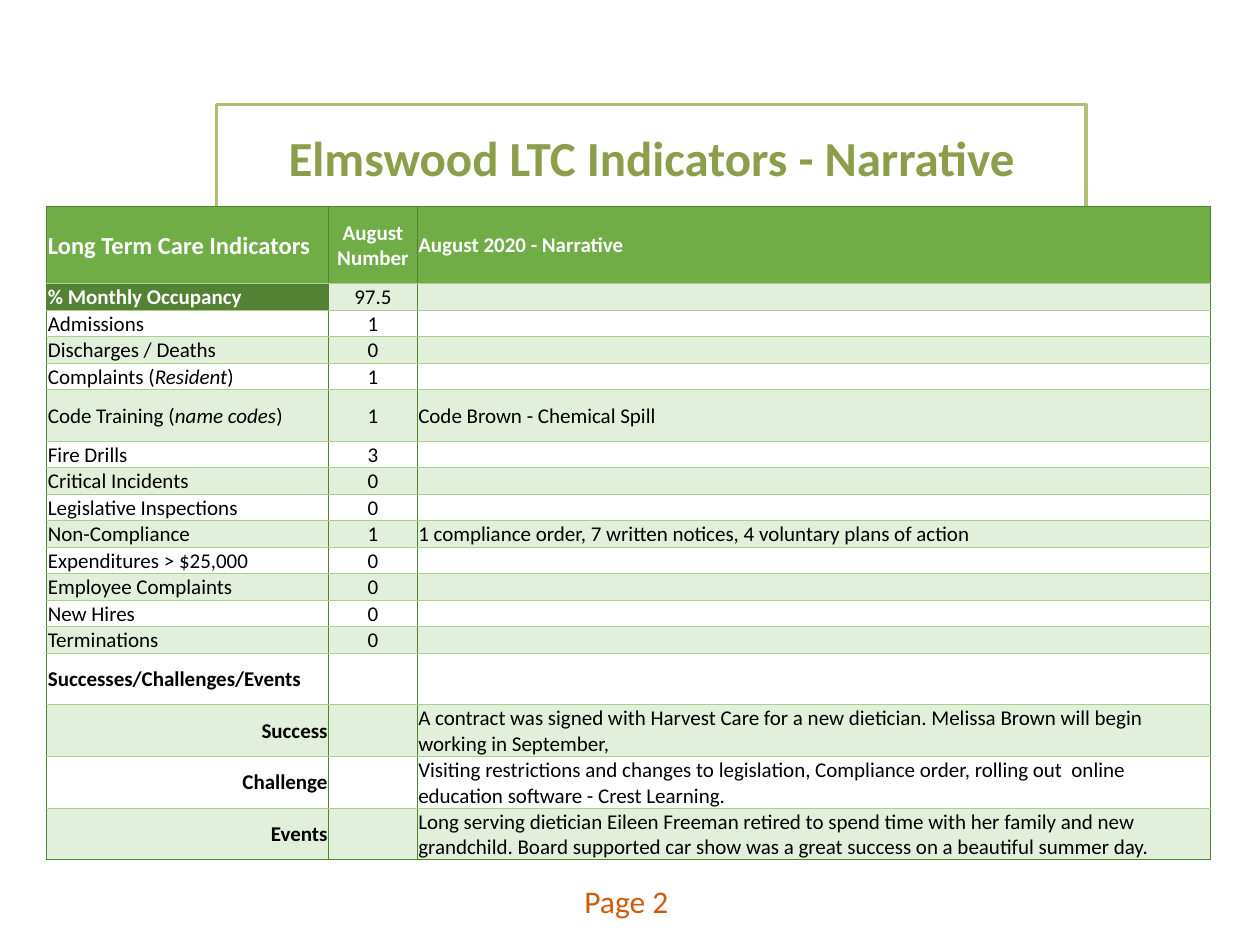
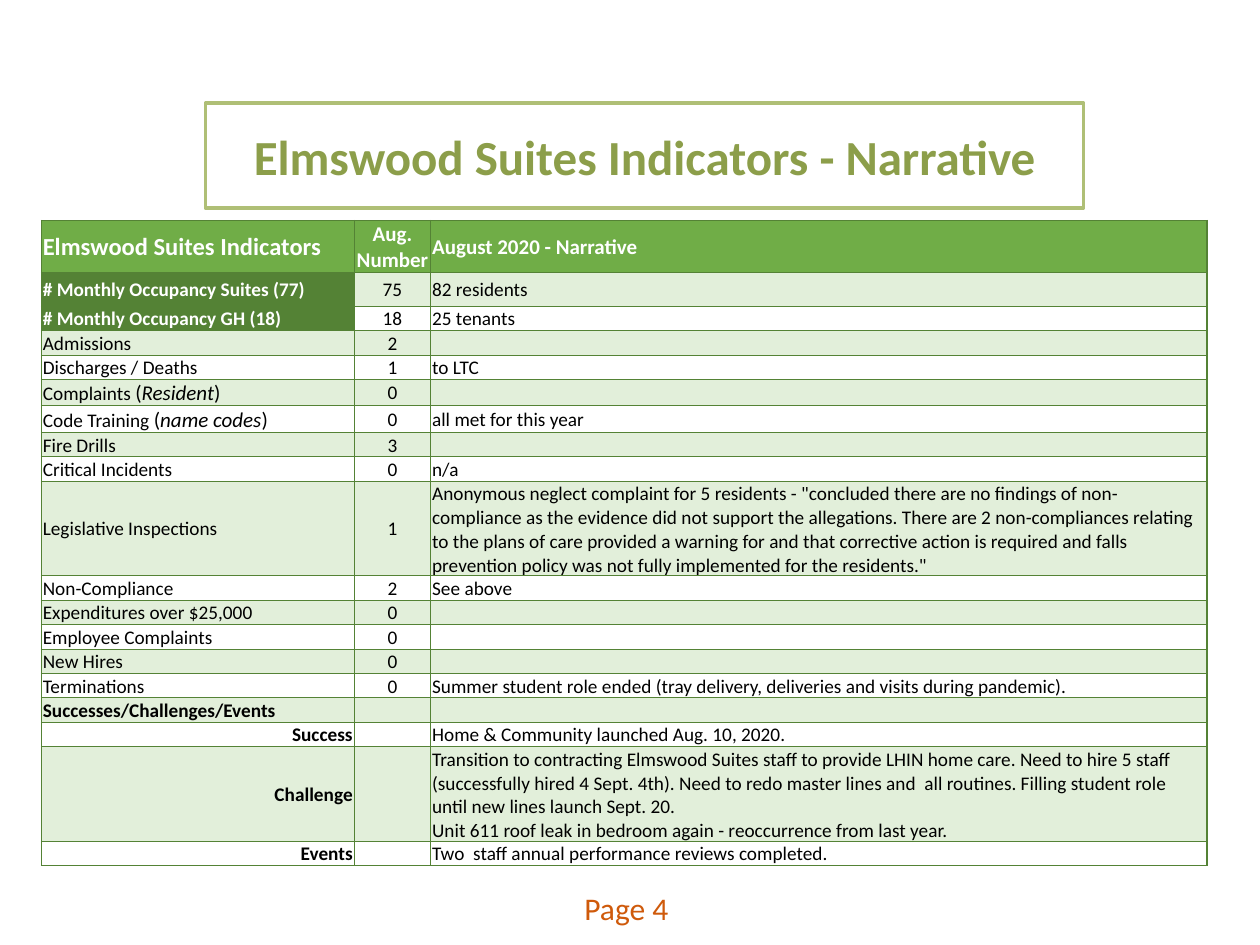
from lxml import etree
from pptx import Presentation
from pptx.dml.color import RGBColor
from pptx.enum import text
from pptx.oxml import ns
from pptx.util import Inches, Pt

FONT = "Calibri"
COLORS = {
    "title": "8C9E4A", "frame": "AFBF76", "page": "CF5A0B", "header": "70AD47",
    "dark": "548235", "light": "A9D08E", "band": "E2EFDA", "white": "FFFFFF", "black": "000000",
}
ALIGN = text.PP_ALIGN


def add_span(para, words, size, color, bold=False, italic=False):
    for number, line in enumerate(words.split("\n")):
        if number:
            para.add_line_break()
        span = para.add_run()
        span.text = line
        span.font.name = FONT
        span.font.size = Pt(size)
        span.font.bold = bold
        span.font.italic = italic
        span.font.color.rgb = RGBColor.from_string(COLORS[color])


def add_border(cell, side, color, width):
    line = etree.SubElement(cell._tc.get_or_add_tcPr(), ns.qn(f"a:ln{side}"), w=str(Pt(width)))
    fill = etree.SubElement(line, ns.qn("a:solidFill"))
    etree.SubElement(fill, ns.qn("a:srgbClr"), val=COLORS[color])


care_rows = [
    (0.61, "Long Term Care Indicators", "August\nNumber", "August 2020 - Narrative"),
    (0.21, "% Monthly Occupancy", "97.5", ""),
    (0.21, "Admissions", "1", ""),
    (0.21, "Discharges / Deaths", "0", ""),
    (0.21, "Complaints |(|Resident|)", "1", ""),
    (0.41, "Code Training |(|name codes|)", "1", "Code Brown - Chemical Spill"),
    (0.21, "Fire Drills", "3", ""),
    (0.21, "Critical Incidents", "0", ""),
    (0.21, "Legislative Inspections", "0", ""),
    (0.21, "Non-Compliance", "1", "1 compliance order, 7 written notices, 4 voluntary plans of action"),
    (0.21, "Expenditures > $25,000", "0", ""),
    (0.21, "Employee Complaints", "0", ""),
    (0.21, "New Hires", "0", ""),
    (0.21, "Terminations", "0", ""),
    (0.41, "Successes/Challenges/Events", "", ""),
    (0.41, "Success", "", "A contract was signed with Harvest Care for a new dietician. Melissa Brown "
     "will begin working in September,"),
    (0.41, "Challenge", "", "Visiting restrictions and changes to legislation, Compliance order, "
     "rolling out  online education software - Crest Learning."),
    (0.41, "Events", "", "Long serving dietician Eileen Freeman retired to spend time with her family "
     "and new grandchild. Board supported car show was a great success on a beautiful summer day."),
]
suites_rows = [
    (0.41, "Elmswood Suites Indicators", "Aug.\nNumber", "August 2020 - Narrative"),
    (0.27, "# Monthly Occupancy Suites (77)", "75", "82 residents"),
    (0.19, "# Monthly Occupancy GH (18)", "18", "25 tenants"),
    (0.19, "Admissions", "2", ""),
    (0.19, "Discharges / Deaths", "1", "to LTC"),
    (0.21, "Complaints |(|Resident|)", "0", ""),
    (0.21, "Code Training |(|name codes|)", "0", "all met for this year"),
    (0.19, "Fire Drills", "3", ""),
    (0.19, "Critical Incidents", "0", "n/a"),
    (0.75, "Legislative Inspections", "1", "Anonymous neglect complaint for 5 residents - "
     "\"concluded there are no findings of non-compliance as the evidence did not support the "
     "allegations. There are 2 non-compliances relating to the plans of care provided a warning for "
     "and that corrective action is required and falls prevention policy was not fully implemented "
     "for the residents.\""),
    (0.19, "Non-Compliance", "2", "See above"),
    (0.19, "Expenditures over $25,000", "0", ""),
    (0.19, "Employee Complaints", "0", ""),
    (0.19, "New Hires", "0", ""),
    (0.19, "Terminations", "0", "Summer student role ended (tray delivery, deliveries and visits "
     "during pandemic)."),
    (0.19, "Successes/Challenges/Events", "", ""),
    (0.19, "Success", "", "Home & Community launched Aug. 10, 2020."),
    (0.75, "Challenge", "", "Transition to contracting Elmswood Suites staff to provide LHIN home "
     "care. Need to hire 5 staff (successfully hired 4 Sept. 4th). Need to redo master lines and  all "
     "routines. Filling student role until new lines launch Sept. 20.\n"
     "Unit 611 roof leak in bedroom again - reoccurrence from last year."),
    (0.19, "Events", "", "Two  staff annual performance reviews completed."),
]
pages = [
    dict(title="Elmswood LTC Indicators - Narrative", title_at=(1.72, 0.96, 6.9, 0.57),
         footer="Page 2", footer_top=6.95, table_at=(0.37, 1.64), columns=(2.24, 0.7, 6.3),
         rows=care_rows, size=12, inner="light", outer_width=0.5),
    dict(title="Elmswood Suites Indicators - Narrative", title_at=(1.63, 0.95, 6.97, 0.57),
         footer="Page 4", footer_top=7.01, table_at=(0.33, 1.75), columns=(2.48, 0.61, 6.16),
         rows=suites_rows, size=11, inner="dark", outer_width=1),
]

deck = Presentation()
deck.slide_width, deck.slide_height = Inches(10), Inches(7.5)

for plan in pages:
    page = deck.slides.add_slide(deck.slide_layouts[5])

    title = page.shapes.title
    title.left, title.top, title.width, title.height = map(Inches, plan["title_at"])
    title.fill.solid()
    title.fill.fore_color.rgb = RGBColor.from_string(COLORS["white"])
    title.line.color.rgb = RGBColor.from_string(COLORS["frame"])
    title.line.width = Pt(2)
    title.text_frame.auto_size = text.MSO_AUTO_SIZE.SHAPE_TO_FIT_TEXT
    title.text_frame.paragraphs[0].alignment = ALIGN.CENTER
    add_span(title.text_frame.paragraphs[0], plan["title"], 28, "title", bold=True)

    footer = page.shapes.add_textbox(Inches(4.54), Inches(plan["footer_top"]), Inches(2.33), Inches(0.4))
    footer.text_frame.word_wrap = True
    add_span(footer.text_frame.paragraphs[0], plan["footer"], 18, "page")

    rows, columns = plan["rows"], plan["columns"]
    left, top = plan["table_at"]
    height = sum(row[0] for row in rows)
    table = page.shapes.add_table(len(rows), 3, Inches(left), Inches(top),
                                  Inches(sum(columns)), Inches(height)).table
    table.first_row = table.horz_banding = False
    for column, width in zip(table.columns, columns):
        column.width = Inches(width)

    for row_number, (row_height, *entries) in enumerate(rows):
        table.rows[row_number].height = Inches(row_height)
        header, last = row_number == 0, row_number == len(rows) - 1
        for column_number, entry in enumerate(entries):
            cell = table.cell(row_number, column_number)
            cell.vertical_anchor = text.MSO_ANCHOR.MIDDLE
            cell.margin_left = cell.margin_top = cell.margin_right = Inches(0.01)
            cell.margin_bottom = 0

            edges = {"L": column_number == 0, "R": column_number == 2, "T": header, "B": last}
            for side, outer in edges.items():
                color = "dark" if outer or side in "LR" else plan["inner"]
                add_border(cell, side, color, plan["outer_width"] if outer else 0.5)

            occupancy = column_number == 0 and "Monthly Occupancy" in entry
            shade = "header" if header else "dark" if occupancy else "band" if row_number % 2 else None
            if shade:
                cell.fill.solid()
                cell.fill.fore_color.rgb = RGBColor.from_string(COLORS[shade])
            else:
                cell.fill.background()

            para = cell.text_frame.paragraphs[0]
            outcome = column_number == 0 and entry in ("Success", "Challenge", "Events")
            para.alignment = ALIGN.CENTER if column_number == 1 else ALIGN.RIGHT if outcome else ALIGN.LEFT
            if not entry:
                etree.SubElement(para._p, ns.qn("a:endParaRPr"), sz=str(plan["size"] * 100))
                continue
            size = (14 if column_number == 0 else 12) if header else plan["size"]
            bold = header or occupancy or outcome or entry.startswith("Successes/")
            color = "white" if header or occupancy else "black"
            for piece_number, piece in enumerate(entry.split("|")):
                add_span(para, piece, 12 if piece_number else size, color, bold, piece_number == 2)

deck.save("out.pptx")
